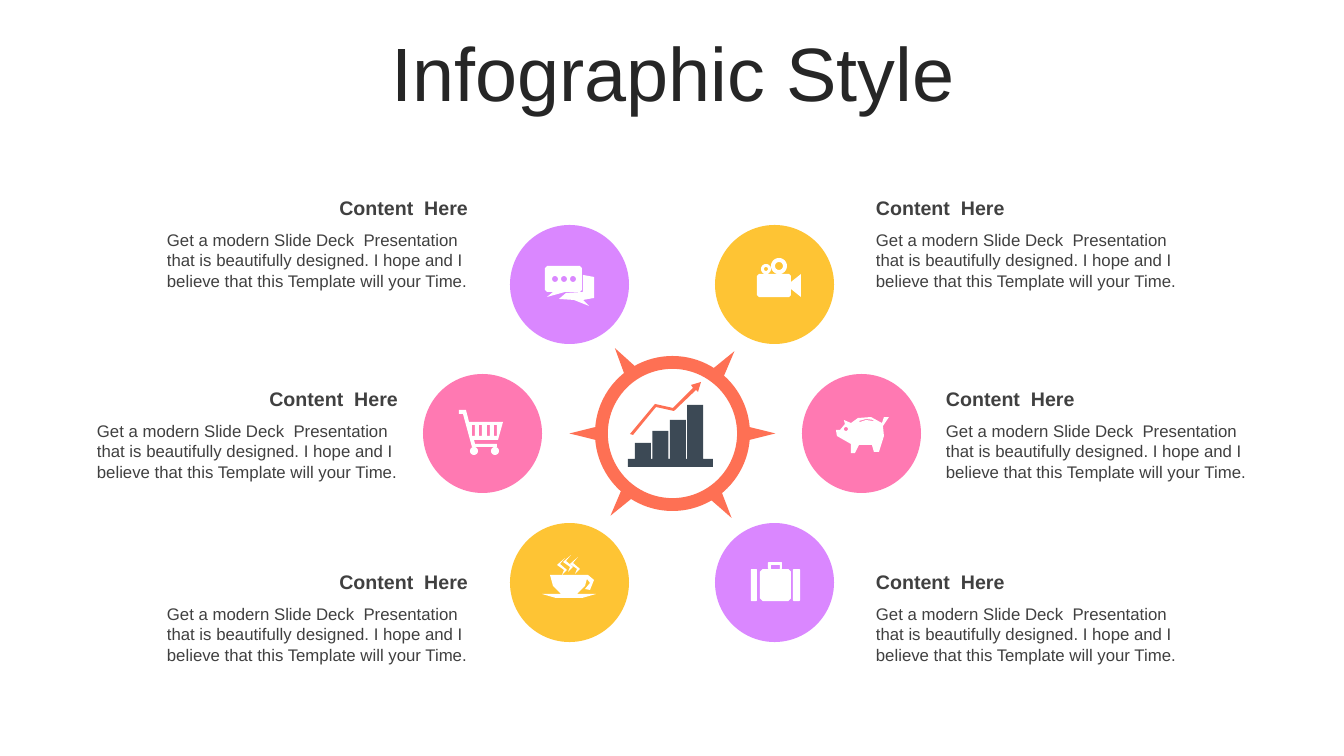
import math
from dataclasses import dataclass

import pptx
import pptx.dml.color
import pptx.enum.shapes
import pptx.enum.text
import pptx.util

TITLE = "Infographic Style"
HEADING = "Content  Here"
BODY = ("Get a modern Slide Deck  Presentation that is beautifully designed. "
        "I hope and I believe that this Template will your Time.")


@dataclass(frozen=True)
class Theme:
    font: str = "Arial"
    title_size: int = 54
    heading_size: int = 14
    body_size: int = 12
    title: str = "262626"
    text: str = "404040"
    accent: str = "FE7054"
    bars: str = "3C4955"
    white: str = "FFFFFF"
    yellow: str = "FEC434"
    pink: str = "FF79B2"
    purple: str = "DA87FF"


THEME = Theme()
PX = 914400 / 100.8
PAGE_WIDTH, PAGE_HEIGHT = 1344, 756
TITLE_BOX = (35, 37, 1276, 80)
HUB_LEFT, HUB_TOP, HUB_SIZE, HUB_RING = 595, 356, 155, 0.083
SPIKE_ANGLES = (0, 55, 127, 180, 236, 307)
SPIKE_FOOT, SPIKE_TIP, SPIKE_SPREAD = 71, 103, 6.5
CIRCLE = 119
TEXT_WIDTH, HEADING_HEIGHT, BODY_HEIGHT = 321, 34, 72

# Each row: circle left, circle top, text left, text top; the right side mirrors it
ROWS = [(510, 225, 157, 191), (423, 374, 87, 382), (510, 523, 157, 565)]
CIRCLE_COLOURS = {
    "left": [THEME.purple, THEME.pink, THEME.yellow],
    "right": [THEME.yellow, THEME.pink, THEME.purple],
}

# A contour is a circle (x, y, radius), a box (x, y, width, height) or a list of corners
CHAT = [(x, 13, 3) for x in (10, 19, 28)] + [
    (0, 0, 37, 26), [(8, 26), (20, 26), (2, 31)],
    [(38, 9), (49, 11), (49, 32), (38, 34), (44, 40), (29, 34), (14, 33), (21, 27), (38, 26)],
]
CART = [(x, 15, 3, 11) for x in (13, 20, 28, 35)] + [(x, 41, 4) for x in (15, 36)] + [
    [(0, 0), (7, 0), (10, 12), (44, 12), (39, 30), (15, 30), (16, 34), (38, 34),
     (38, 37), (13, 37), (4, 4), (0, 4)],
]
CUP = [[(x + 5, y), (x, y + 6), (x + 7, y + 12), (x + 2, y + 17), (x + 4, y + 12),
        (x - 3, y + 7)] for x, y in ((18, 3), (24, 0), (31, 2))] + [
    [(8, 20), (46, 20), (43, 31), (35, 39), (19, 39), (11, 31)],
    [(46, 20), (52, 25), (48, 35), (43, 34), (48, 28), (45, 24)],
    [(0, 39), (54, 39), (40, 43), (14, 43)],
]
CAMERA = [(9, 10, 5), (9, 10, 2), (22, 7, 8), (22, 7, 4), (0, 15, 34, 23),
          [(34, 23), (44, 15), (44, 38), (34, 30)]]
PIG = [
    (10, 12, 2),
    [(23, 4), (30, 2), (38, 3), (37, 4), (30, 3), (24, 5)],
    [(8, 3), (15, 6), (22, 1), (35, 0), (46, 6), (48, 0), (53, 0), (47, 9), (48, 19),
     (43, 35), (38, 35), (36, 28), (23, 28), (19, 36), (15, 36), (15, 27), (1, 19),
     (0, 13), (4, 13), (9, 7)],
]
SUITCASE = [(0, 7, 6, 32), (9, 7, 31, 32), (42, 7, 7, 32), (17, 0, 14, 7), (20, 3, 9, 4)]
ICONS = [(CHAT, 545, 266), (CART, 459, 410), (CUP, 542, 555),
         (CAMERA, 757, 259), (PIG, 836, 417), (SUITCASE, 751, 562)]
BAR_TOPS = (38, 26, 15, 0)
BAR_START, BAR_STEP, BAR_WIDTH = 7, 17.4, 16
BASE_TOP, BASE_BOTTOM, BASE_WIDTH = 54, 62, 85
TREND = [(0, 52), (25, 22), (43, 26), (63, 6), (61, 3), (71, 0), (68, 10), (66, 8),
         (44, 29), (26, 25), (3, 53)]


def emu(*lengths):
    return [round(length * PX) for length in lengths]


def colour(value):
    return pptx.dml.color.RGBColor.from_string(value)


def paint(shape, fill):
    shape.shadow.inherit = False
    shape.fill.solid()
    shape.fill.fore_color.rgb = colour(fill)
    shape.line.fill.background()


def polar(x, y, radius, degrees):
    angle = math.radians(degrees)
    return x + radius * math.cos(angle), y + radius * math.sin(angle)


def trace(contour):
    """Turn a circle, a box with cut corners or a list of corners into points."""
    if isinstance(contour, list):
        return contour
    if len(contour) == 3:
        return [polar(*contour, degrees) for degrees in range(0, 360, 15)]
    x, y, width, height = contour
    right, bottom, cut = x + width, y + height, min(width, height) / 12
    return [(x + cut, y), (right - cut, y), (right, y + cut), (right, bottom - cut),
            (right - cut, bottom), (x + cut, bottom), (x, bottom - cut), (x, y + cut)]


def add_outline(page, contours, left, top, fill):
    builder = None
    for contour in contours:
        points = [emu(left + x, top + y) for x, y in trace(contour)]
        if builder is None:
            builder = page.shapes.build_freeform(*points[0], scale=1.0)
        else:
            builder.move_to(*points[0])
        builder.add_line_segments(points[1:], close=True)
    paint(builder.convert_to_shape(), fill)


def add_text(page, place, text, size, ink, align="LEFT", bold=False, anchor="MIDDLE"):
    frame = page.shapes.add_textbox(*emu(*place)).text_frame
    frame.word_wrap = True
    frame.vertical_anchor = pptx.enum.text.MSO_ANCHOR[anchor]
    para = frame.paragraphs[0]
    para.alignment = pptx.enum.text.PP_ALIGN[align]
    span = para.add_run()
    span.text = text
    span.font.name, span.font.size, span.font.bold = THEME.font, pptx.util.Pt(size), bold
    span.font.color.rgb = colour(ink)
    return para


def add_hub(page):
    hub = page.shapes.add_shape(pptx.enum.shapes.MSO_SHAPE.DONUT,
                                *emu(HUB_LEFT, HUB_TOP, HUB_SIZE, HUB_SIZE))
    hub.adjustments[0] = HUB_RING
    paint(hub, THEME.accent)
    spikes = [[polar(0, 0, SPIKE_FOOT, angle - SPIKE_SPREAD),
               polar(0, 0, SPIKE_TIP, angle),
               polar(0, 0, SPIKE_FOOT, angle + SPIKE_SPREAD)] for angle in SPIKE_ANGLES]
    add_outline(page, spikes, HUB_LEFT + HUB_SIZE / 2, HUB_TOP + HUB_SIZE / 2, THEME.accent)


def add_bar_icon(page):
    skyline = [(0, BASE_BOTTOM), (0, BASE_TOP)]
    for index, top in enumerate(BAR_TOPS):
        left = BAR_START + index * BAR_STEP
        right = left + BAR_WIDTH
        skyline += [(left, BASE_TOP), (left, top), (right, top), (right, BASE_TOP)]
    skyline += [(BASE_WIDTH, BASE_TOP), (BASE_WIDTH, BASE_BOTTOM)]
    add_outline(page, [skyline], 628, 405, THEME.bars)
    add_outline(page, [TREND], 630, 382, THEME.accent)


def main():
    deck = pptx.Presentation()
    deck.slide_width, deck.slide_height = emu(PAGE_WIDTH, PAGE_HEIGHT)
    page = deck.slides.add_slide(deck.slide_layouts[6])
    title = add_text(page, TITLE_BOX, TITLE, THEME.title_size, THEME.title, "CENTER")
    title.line_spacing = 0.9
    add_hub(page)

    for side, fills in CIRCLE_COLOURS.items():
        for (circle_left, circle_top, left, top), fill in zip(ROWS, fills):
            if side == "right":
                circle_left = PAGE_WIDTH - circle_left - CIRCLE
                left = PAGE_WIDTH - left - TEXT_WIDTH
            add_text(page, (left, top, TEXT_WIDTH, HEADING_HEIGHT), HEADING, THEME.heading_size,
                     THEME.text, "RIGHT" if side == "left" else "LEFT", bold=True)
            add_text(page, (left, top + HEADING_HEIGHT, TEXT_WIDTH, BODY_HEIGHT), BODY,
                     THEME.body_size, THEME.text, anchor="TOP")
            circle = page.shapes.add_shape(pptx.enum.shapes.MSO_SHAPE.OVAL,
                                           *emu(circle_left, circle_top, CIRCLE, CIRCLE))
            paint(circle, fill)

    for contours, left, top in ICONS:
        add_outline(page, contours, left, top, THEME.white)
    add_bar_icon(page)
    deck.save("out.pptx")


if __name__ == "__main__":
    main()
